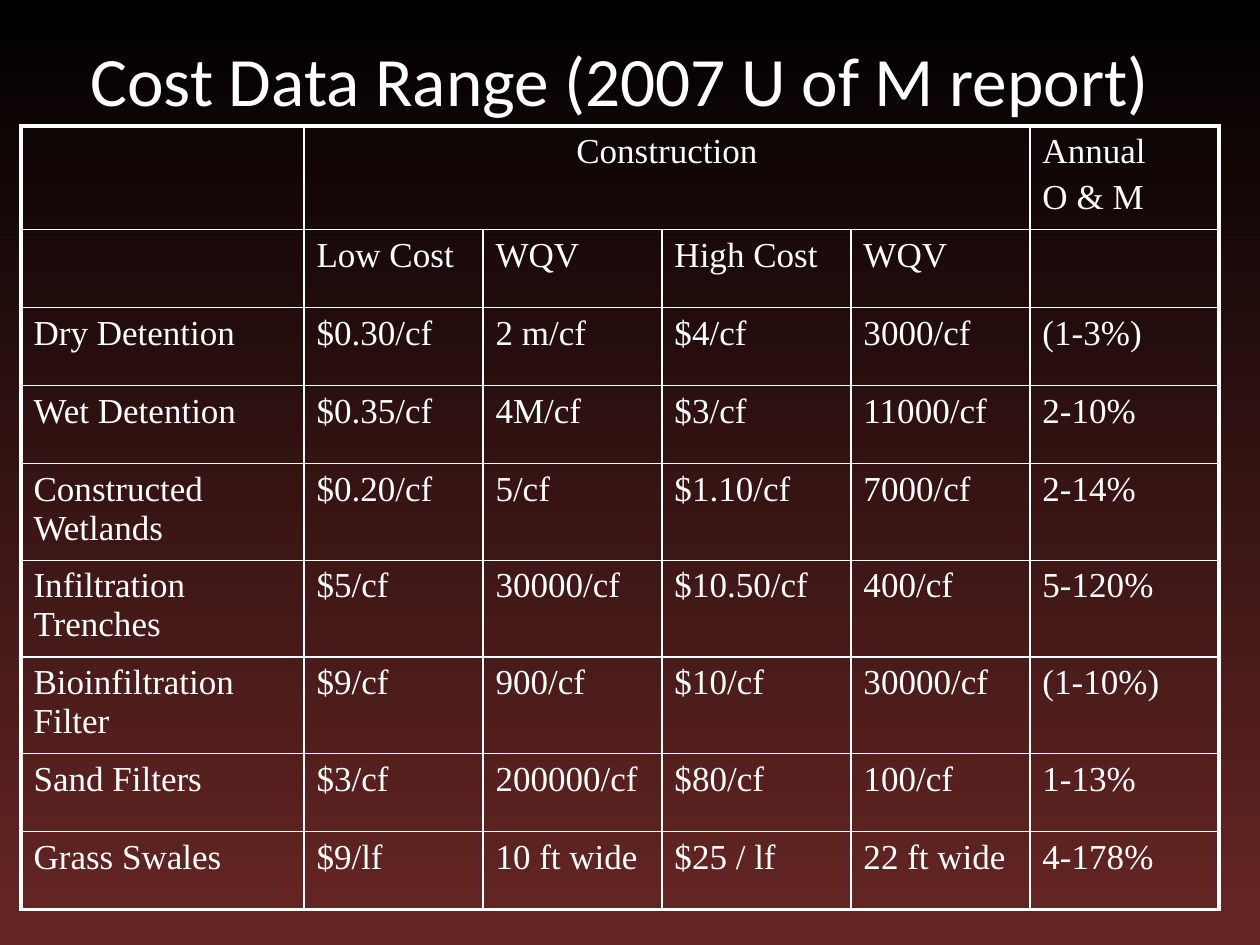
from dataclasses import dataclass

from lxml.etree import SubElement
from pptx import Presentation
from pptx.dml.color import RGBColor as RGB
from pptx.enum.text import MSO_ANCHOR as Anchor, PP_ALIGN as Align
from pptx.oxml.ns import qn
from pptx.util import Pt


@dataclass(frozen=True)
class Theme:
    ink: str = "FFFFFF"
    top: str = "000000"
    base: str = "632523"
    head: str = "Calibri"
    body: str = "Times New Roman"
    big: float = 39.6
    text: float = 20
    thin: float = 1
    thick: float = 2.25


T = Theme()
PX = 914400 / 126

COLS = [283, 179, 179, 189, 179, 189]
ROW = 78
DATA = [
    ["", "Construction", "", "", "", "Annual\nO & M"],
    ["", "Low Cost", "WQV", "High Cost", "WQV", ""],
    ["Dry Detention", "$0.30/cf", "2 m/cf", "$4/cf", "3000/cf", "(1-3%)"],
    ["Wet Detention", "$0.35/cf", "4M/cf", "$3/cf", "11000/cf", "2-10%"],
    ["Constructed Wetlands", "$0.20/cf", "5/cf", "$1.10/cf", "7000/cf", "2-14%"],
    ["Infiltration Trenches", "$5/cf", "30000/cf", "$10.50/cf", "400/cf", "5-120%"],
    ["Bioinfiltration Filter", "$9/cf", "900/cf", "$10/cf", "30000/cf", "(1-10%)"],
    ["Sand Filters", "$3/cf", "200000/cf", "$80/cf", "100/cf", "1-13%"],
    ["Grass Swales", "$9/lf", "10 ft wide", "$25 / lf", "22 ft wide", "4-178%"],
]


def px(*vals):
    """Turn pixel lengths into EMU."""
    return [round(v * PX) for v in vals]


def write(para, text, face, size):
    run = para.add_run()
    run.text = text
    run.font.name = face
    run.font.size = Pt(size)
    run.font.color.rgb = RGB.from_string(T.ink)


prs = Presentation()
prs.slide_width, prs.slide_height = px(1260, 945)
slide = prs.slides.add_slide(prs.slide_layouts[6])

# Background
fill = slide.background.fill
fill.gradient()
fill.gradient_angle = 270
for stop, (pos, tone) in zip(fill.gradient_stops, [(0, T.top), (0.96, T.base)]):
    stop.position = pos
    stop.color.rgb = RGB.from_string(tone)

# Title
frame = slide.shapes.add_textbox(*px(53, 0, 1134, 158)).text_frame
frame.word_wrap = True
frame.vertical_anchor = Anchor.MIDDLE
para = frame.paragraphs[0]
para.alignment = Align.CENTER
write(para, "Cost Data Range (2007 U of M report)", T.head, T.big)

# Cost table
rows, cols = len(DATA), len(COLS)
size = px(21, 126, sum(COLS), ROW * rows)
table = slide.shapes.add_table(rows, cols, *size).table
table.first_row = table.horz_banding = False
for col, wide in zip(table.columns, px(*COLS)):
    col.width = wide
for row in table.rows:
    row.height = px(ROW)[0]
table.cell(0, 1).merge(table.cell(0, 4))

for r, line in enumerate(DATA):
    for c, text in enumerate(line):
        cell = table.cell(r, c)
        props = cell._tc.get_or_add_tcPr()
        outer = {"L": c == 0, "R": c == cols - 1, "T": r == 0, "B": r == rows - 1}
        for side, edge in outer.items():
            width = Pt(T.thick if edge else T.thin)
            ln = SubElement(props, qn(f"a:ln{side}"), w=str(width))
            solid = SubElement(ln, qn("a:solidFill"))
            SubElement(solid, qn("a:srgbClr"), val=T.ink)
        cell.fill.background()
        if not text:
            continue
        frame = cell.text_frame
        for i, part in enumerate(text.split("\n")):
            para = frame.add_paragraph() if i else frame.paragraphs[0]
            para.space_before = Pt(T.text * 0.2)
            para.alignment = Align.CENTER if cell.is_merge_origin else Align.LEFT
            write(para, part, T.body, T.text)

prs.save("out.pptx")
